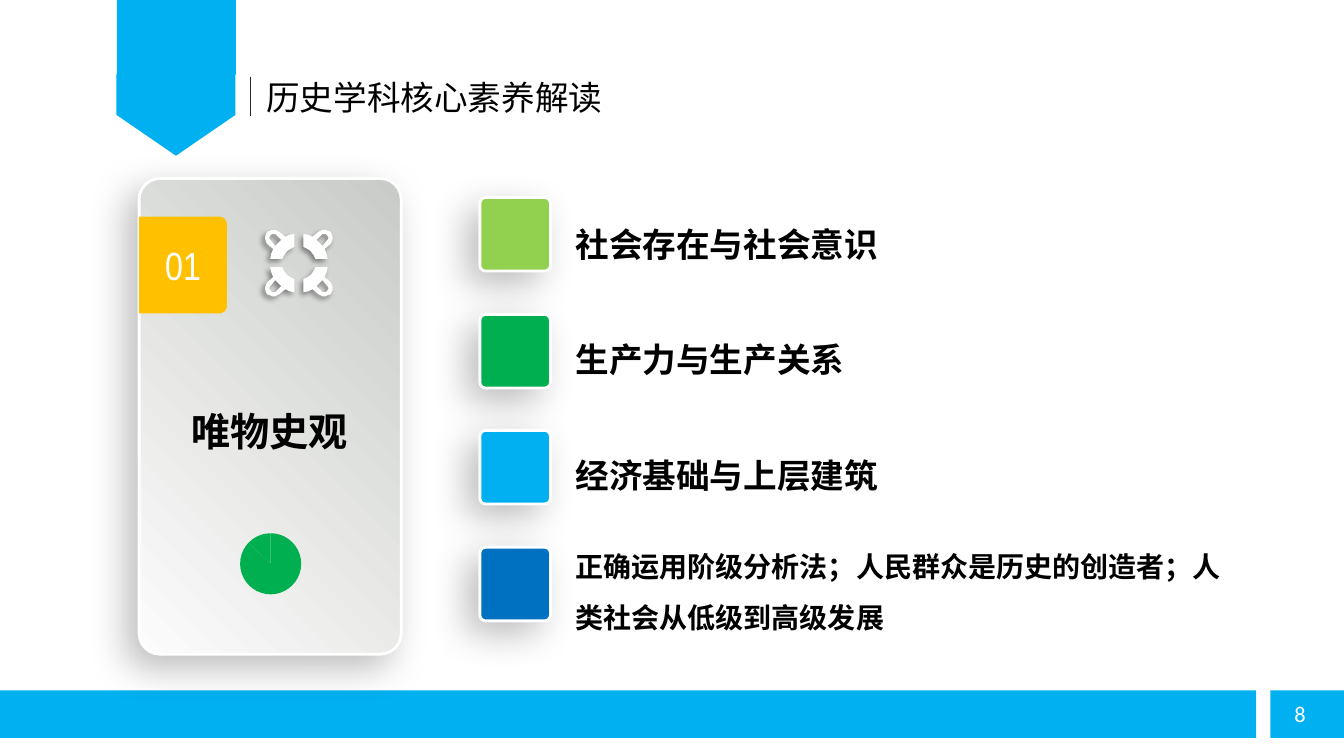
import math

import lxml.etree
import pptx
import pptx.chart.data
import pptx.dml.color
import pptx.enum.chart
import pptx.enum.shapes
import pptx.enum.text
import pptx.oxml.ns
import pptx.util

PX = 9144  # one px is a hundredth of an inch
SHAPE = pptx.enum.shapes.MSO_SHAPE
ALIGN = pptx.enum.text.PP_ALIGN
qn = pptx.oxml.ns.qn


def rgb(color):
    return pptx.dml.color.RGBColor.from_string(color)


def add_xml(parent, tag, **attrs):
    return lxml.etree.SubElement(parent, qn(tag), {k: str(v) for k, v in attrs.items()})


class Deck:
    blue, green, white, black = "00B0F0", "00B050", "FFFFFF", "000000"
    cjk, latin, narrow = "Noto Sans CJK SC", "Calibri", "Arial Narrow"
    card_shadow = (26, 27, 12)  # opacity, blur, distance
    icon_shadow = (40, 4, 3)

    def __init__(self, width, height):
        self.prs = pptx.Presentation()
        self.prs.slide_width, self.prs.slide_height = width * PX, height * PX
        self.slide = self.prs.slides.add_slide(self.prs.slide_layouts[5])
        self.shapes = self.slide.shapes

    def finish(self, s, fill, line=None, shadow=None):
        """Apply fill, outline and shadow; a pair of fills makes a gradient."""
        if isinstance(fill, tuple):
            s.fill.gradient()
            s.fill.gradient_angle = 225
            for stop, color in zip(s.fill.gradient_stops, fill):
                stop.color.rgb = rgb(color)
        else:
            s.fill.solid()
            s.fill.fore_color.rgb = rgb(fill)
        if line:
            s.line.color.rgb = rgb(line)
            s.line.width = pptx.util.Pt(2)
        else:
            s.line.fill.background()
        s.shadow.inherit = False
        if shadow:
            opacity, blur, dist = shadow
            effects = s._element.spPr.find(qn("a:effectLst"))
            outer = add_xml(effects, "a:outerShdw", blurRad=blur * 12700,
                            dist=dist * 12700, dir=135 * 60000, algn="tr", rotWithShape=0)
            color = add_xml(outer, "a:srgbClr", val=self.black)
            add_xml(color, "a:alpha", val=opacity * 1000)
        return s

    def shape(self, kind, x, y, w, h, fill, **style):
        s = self.shapes.add_shape(kind, x * PX, y * PX, w * PX, h * PX)
        return self.finish(s, fill, **style)

    def card(self, x, y, w, h, fill):
        s = self.shape(SHAPE.ROUNDED_RECTANGLE, x, y, w, h, fill,
                       line=self.white, shadow=self.card_shadow)
        s.adjustments[0] = 0.08

    def outline(self, contours, fill, **style):
        first, *others = contours
        builder = self.shapes.build_freeform(*first[0], scale=PX)
        builder.add_line_segments(first[1:], close=True)
        for points in others:
            builder.move_to(*points[0])
            builder.add_line_segments(points[1:], close=True)
        return self.finish(builder.convert_to_shape(), fill, **style)

    def line(self, x1, y1, x2, y2, color):
        c = self.shapes.add_connector(pptx.enum.shapes.MSO_CONNECTOR.STRAIGHT,
                                      x1 * PX, y1 * PX, x2 * PX, y2 * PX)
        c.line.color.rgb = rgb(color)
        c.line.width = pptx.util.Pt(0.75)
        add_xml(c._element.spPr, "a:effectLst")

    def set_text(self, s, text, size, font, color, bold=False, align=ALIGN.LEFT, spacing=1.0):
        tf = s.text_frame
        tf.word_wrap = True
        tf.auto_size = pptx.enum.text.MSO_AUTO_SIZE.SHAPE_TO_FIT_TEXT
        tf.vertical_anchor = pptx.enum.text.MSO_ANCHOR.TOP
        p = tf.paragraphs[0]
        p.alignment, p.line_spacing = align, spacing
        r = p.add_run()
        r.text = text
        r.font.size, r.font.bold, r.font.name = pptx.util.Pt(size), bold, font
        r.font.color.rgb = rgb(color)
        add_xml(r._r.get_or_add_rPr(), "a:ea", typeface=font)

    def text(self, x, y, w, h, text, size, font, color, **style):
        s = self.shapes.add_textbox(x * PX, y * PX, w * PX, h * PX)
        self.set_text(s, text, size, font, color, **style)

    def title(self, x, y, w, h, text):
        s = self.shapes.title
        s.left, s.top, s.width, s.height = x * PX, y * PX, w * PX, h * PX
        self.set_text(s, text, 24, self.cjk, self.black)

    def pie(self, x, y, w, h, values, colors, plot):
        data = pptx.chart.data.CategoryChartData()
        data.categories = [str(i + 1) for i in range(len(values))]
        data.add_series("Series 1", values)
        chart = self.shapes.add_chart(pptx.enum.chart.XL_CHART_TYPE.PIE,
                                      x * PX, y * PX, w * PX, h * PX, data).chart
        chart.has_legend = chart.has_title = False
        chart.font.size, chart.font.name = pptx.util.Pt(18), self.latin
        chart.font.color.rgb = rgb(self.black)
        chart.plots[0].vary_by_categories = False
        for i, color in enumerate(colors):
            point = chart.plots[0].series[0].points[i].format
            point.fill.solid()
            point.fill.fore_color.rgb = rgb(color)
            point.line.fill.background()
        # Fixed plot area, as fractions of the chart
        area = chart._chartSpace.chart.plotArea
        for old in area.findall(qn("c:layout")):
            area.remove(old)
        layout = add_xml(area, "c:layout")
        area.insert(0, layout)
        manual = add_xml(layout, "c:manualLayout")
        add_xml(manual, "c:layoutTarget", val="inner")
        for side in "xy":
            add_xml(manual, f"c:{side}Mode", val="edge")
        for side, value in zip("xywh", plot):
            add_xml(manual, f"c:{side}", val=value)


def tag_outline(x, y, w, h, radius):
    """Rectangle with both right corners rounded."""
    arc = [(radius * math.sin(a), radius * math.cos(a))
           for a in (math.radians(15 * i) for i in range(7))]
    right, bottom = x + w - radius, y + h
    top_arc = [(right + dx, y + radius - dy) for dx, dy in arc]
    bottom_arc = [(right + dx, bottom - radius + dy) for dx, dy in reversed(arc)]
    return [(x, y)] + top_arc + bottom_arc + [(x, bottom)]


# One quarter of the lifebuoy icon: its body and the hole in its loop
BUOY_BODY = [(270, 228), (273, 228), (275, 229), (277, 230), (283, 235), (287, 233),
             (292, 232), (292, 245), (288, 247), (285, 249), (282, 253), (280, 257),
             (268, 257), (269, 252), (271, 247), (265, 242), (264, 240), (263, 237),
             (263, 235), (264, 232), (265, 230), (268, 229)]
BUOY_HOLE = [(272, 232), (270, 232), (269, 233), (268, 234), (267, 236), (268, 238),
             (269, 239), (273, 244), (276, 241), (279, 238), (274, 233), (273, 232)]

TOPICS = [  # swatch colour, text top, text height, size, wording
    ("92D050", 197, 64, 24, "社会存在与社会意识"),
    (Deck.green, 311, 64, 24, "生产力与生产关系"),
    (Deck.blue, 426, 64, 24, "经济基础与上层建筑"),
    ("0070C0", 524, 105, 20, "正确运用阶级分析法；人民群众是历史的创造者；人类社会从低级到高级发展"),
]


def main():
    d = Deck(1333, 750)

    # Header ribbon, title and footer
    d.shape(SHAPE.PENTAGON, 134, 55, 81, 118, d.blue).rotation = 90
    d.shape(SHAPE.RECTANGLE, 116, 0, 118, 74, d.blue)
    d.line(248, 76, 248, 115, "262626")
    d.title(254, 71, 376, 50, "历史学科核心素养解读")
    d.shape(SHAPE.RECTANGLE, 0, 685, 1246, 47, d.blue)
    d.shape(SHAPE.RECTANGLE, 1260, 685, 73, 47, d.blue)
    d.text(1274, 690, 46, 37, "8", 16, d.latin, d.white)

    # Theme card
    d.card(138, 177, 260, 472, ("C9CBC8", "FCFCFC"))
    d.outline([tag_outline(138, 215, 87, 96, 8)], "FFC000")
    d.text(149, 234, 65, 57, "01", 28, d.narrow, d.white, align=ALIGN.CENTER)
    d.text(140, 399, 255, 57, "唯物史观", 28, d.cjk, d.black, bold=True, align=ALIGN.CENTER)
    d.pie(202, 515, 133, 88, (87, 13), (d.green, d.green), (0.27, 0.16, 0.46, 0.69))

    # Lifebuoy icon, mirrored into four quarters
    quarters = [[(593 - x if flip_x else x, 522 - y if flip_y else y) for x, y in part]
                for part in (BUOY_BODY, BUOY_HOLE)
                for flip_x in (False, True) for flip_y in (False, True)]
    d.outline(quarters, d.white, shadow=d.icon_shadow)

    # Topics
    for i, (color, top, height, size, wording) in enumerate(TOPICS):
        d.card(476, 196 + round(115.67 * i), 70, 73, color)
        d.text(561, top, 667, height, wording, size, d.cjk, d.black, bold=True, spacing=1.5)

    d.prs.save("out.pptx")


if __name__ == "__main__":
    main()
